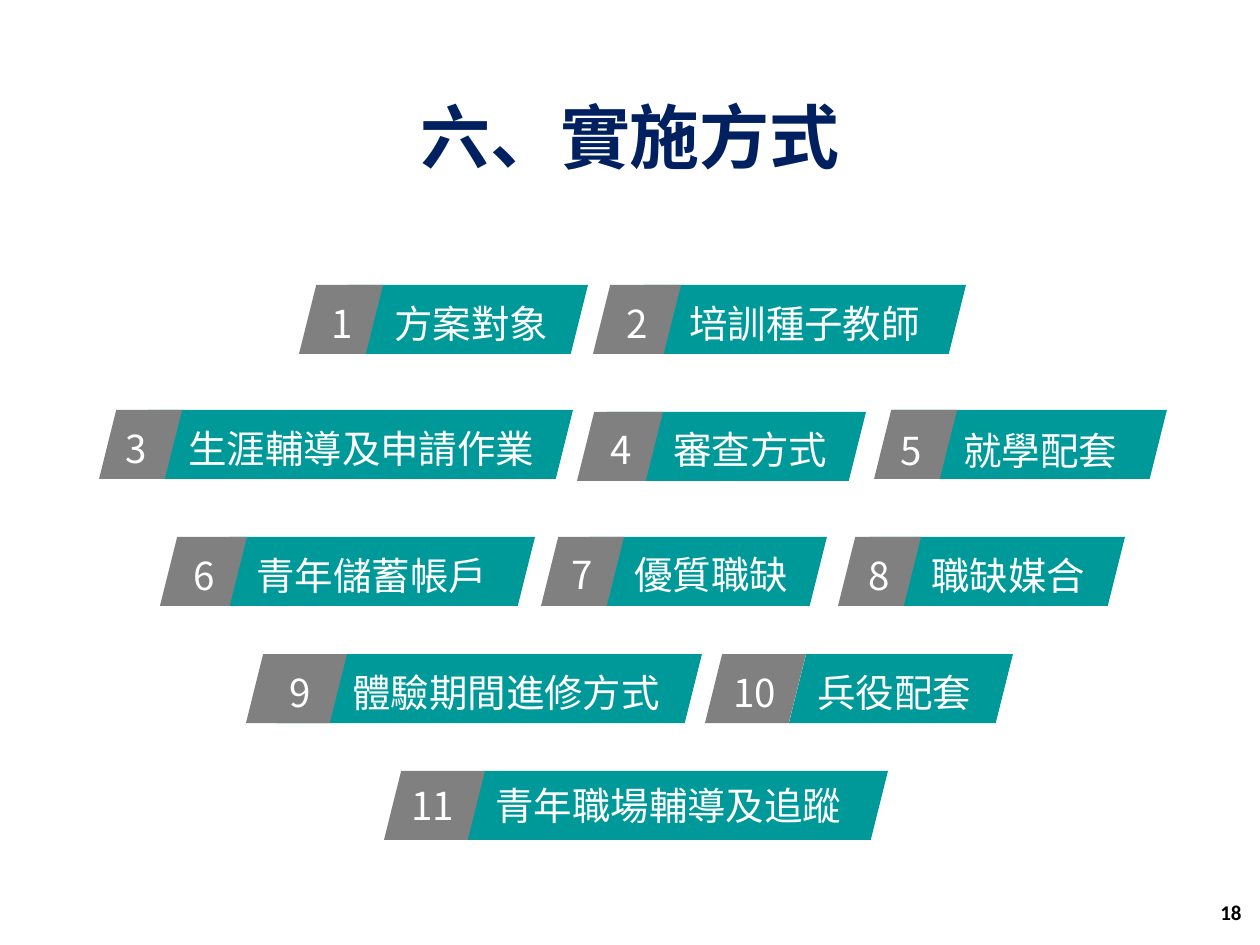
from dataclasses import dataclass

from lxml.etree import SubElement
from pptx import Presentation
from pptx.dml.color import RGBColor
from pptx.enum.shapes import MSO_SHAPE as Shape
from pptx.enum.text import MSO_ANCHOR as Anchor, PP_ALIGN as Align
from pptx.oxml.ns import qn
from pptx.util import Inches, Pt

PX = Inches(1) / 126
CJK = "Noto Sans CJK SC"
TEAL, GRAY, NAVY, WHITE, BLACK = "009999", "808080", "002060", "FFFFFF", "000000"
BAR_HEIGHT = 69
LABEL_TAB, DIGIT_WIDTH = 63, 21


def px(length):
    return round(length * PX)


def color(hex_string):
    return RGBColor.from_string(hex_string)


def write(frame, text, *, size, ink, font=CJK, bold=False, align=Align.LEFT,
          anchor=Anchor.TOP, spacing=1.0, tab=None):
    frame.word_wrap = True
    frame.vertical_anchor = anchor
    paragraph = frame.paragraphs[0]
    paragraph.alignment = align
    paragraph.line_spacing = spacing
    if tab:
        tabs = SubElement(paragraph._p.get_or_add_pPr(), qn("a:tabLst"))
        SubElement(tabs, qn("a:tab"), pos=str(px(tab)), algn="l")
    run = paragraph.add_run()
    run.text = text
    run.font.name = font
    run.font.size = Pt(size)
    run.font.bold = bold
    run.font.color.rgb = color(ink)
    SubElement(run._r.get_or_add_rPr(), qn("a:ea"), typeface=font)


@dataclass
class Step:
    number: int
    label: str
    badge: tuple  # left, width
    bar: tuple
    caption: tuple
    drop: int = 0  # shift of the bar below its row
    inset: int = 4  # caption top below the row
    spacing: float = 1.1


class Deck:
    def __init__(self):
        self.prs = Presentation()
        self.prs.slide_width, self.prs.slide_height = px(1260), px(945)
        self.slide = self.prs.slides.add_slide(self.prs.slide_layouts[5])

    def title(self, text, left, top, width, height):
        title = self.slide.shapes.title
        title.left, title.top, title.width, title.height = map(px, (left, top, width, height))
        write(title.text_frame, text, size=40, ink=NAVY, bold=True,
              align=Align.CENTER, anchor=Anchor.MIDDLE)

    def slant(self, left, top, width, fill):
        shape = self.slide.shapes.add_shape(
            Shape.PARALLELOGRAM, *map(px, (left, top, width, BAR_HEIGHT)))
        shape.shadow.inherit = False
        shape.fill.solid()
        shape.fill.fore_color.rgb = color(fill)
        shape.line.fill.background()

    def text(self, text, left, top, width, height, **style):
        box = self.slide.shapes.add_textbox(*map(px, (left, top, width, height)))
        write(box.text_frame, text, **style)

    def step(self, step, top):
        for (left, width), fill in ((step.bar, TEAL), (step.badge, GRAY)):
            self.slant(left, top + step.drop, width, fill)
        left, width = step.caption
        extra_digits = len(str(step.number)) - 1
        self.text(f"{step.number}\t{step.label}", left, top + step.inset, width, 62,
                  size=22, ink=WHITE, spacing=step.spacing,
                  tab=LABEL_TAB + DIGIT_WIDTH * extra_digits)


# Rows of steps, keyed by their top
ROWS = {
    285: [Step(1, "方案對象", (299, 84), (330, 258), (319, 276)),
          Step(2, "培訓種子教師", (593, 88), (627, 339), (614, 455))],
    410: [Step(3, "生涯輔導及申請作業", (99, 83), (131, 442), (113, 441)),
          Step(4, "審查方式", (577, 86), (590, 276), (598, 249), drop=2, inset=5),
          Step(5, "就學配套", (874, 83), (876, 291), (888, 290), inset=6)],
    537: [Step(6, "青年儲蓄帳戶", (160, 87), (212, 323), (181, 447)),
          Step(7, "優質職缺", (541, 83), (572, 255), (559, 271), inset=3),
          Step(8, "職缺媒合", (838, 83), (852, 273), (856, 271))],
    654: [Step(9, "體驗期間進修方式", (246, 101), (277, 425), (277, 494)),
          Step(10, "兵役配套", (705, 101), (789, 224), (721, 494))],
    771: [Step(11, "青年職場輔導及追蹤", (384, 101), (466, 422), (399, 459),
               inset=5, spacing=1.0)],
}


def main():
    deck = Deck()
    deck.title("六、實施方式", 0, 96, 1260, 79)

    # Numbered steps
    for top, steps in ROWS.items():
        for step in steps:
            deck.step(step, top)

    # Page number
    deck.text("18", 960, 887, 294, 50, size=12, ink=BLACK, font="Calibri",
              bold=True, align=Align.RIGHT, anchor=Anchor.MIDDLE)
    deck.prs.save("out.pptx")


if __name__ == "__main__":
    main()
